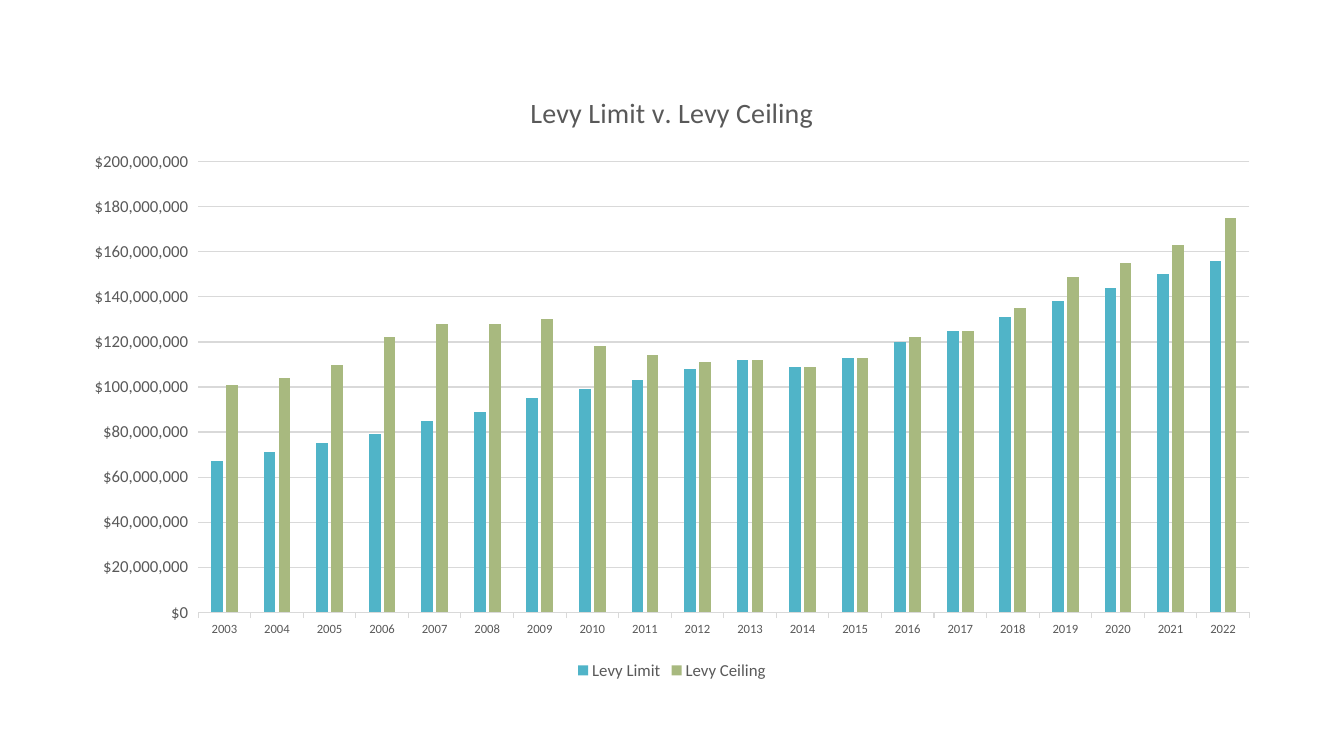
import dataclasses

import pptx
import pptx.chart.data
import pptx.dml.color
import pptx.enum.chart
import pptx.util


@dataclasses.dataclass(frozen=True)
class Theme:
    font: str = "Calibri"
    text: str = "595959"
    rule: str = "D9D9D9"
    title_size: int = 20
    label_size: int = 12
    year_size: int = 9
    rule_width: float = 0.75


@dataclasses.dataclass(frozen=True)
class Levy:
    name: str
    color: str
    millions: tuple[int, ...]


THEME = Theme()
SLIDE_WIDTH = pptx.util.Inches(13.33)
SLIDE_HEIGHT = pptx.util.Inches(7.5)
MILLION = 1_000_000
YEARS = range(2003, 2023)

LEVIES = (
    Levy("Levy Limit", "50B4C8",
         (67, 71, 75, 79, 85, 89, 95, 99, 103, 108,
          112, 109, 113, 120, 125, 131, 138, 144, 150, 156)),
    Levy("Levy Ceiling", "A8B97F",
         (101, 104, 110, 122, 128, 128, 130, 118, 114, 111,
          112, 109, 113, 122, 125, 135, 149, 155, 163, 175)),
)


def rgb(value: str) -> pptx.dml.color.RGBColor:
    return pptx.dml.color.RGBColor.from_string(value)


def style_font(font, size: int) -> None:
    font.name = THEME.font
    font.size = pptx.util.Pt(size)
    font.bold = False
    font.color.rgb = rgb(THEME.text)


def style_rule(line) -> None:
    line.color.rgb = rgb(THEME.rule)
    line.width = pptx.util.Pt(THEME.rule_width)


def add_levy_chart(slide):
    data = pptx.chart.data.CategoryChartData(number_format='"$"#,##0')
    data.categories = [str(year) for year in YEARS]
    for levy in LEVIES:
        data.add_series(levy.name, [value * MILLION for value in levy.millions])
    # Left, top, width and height as shares of the slide
    return slide.shapes.add_chart(
        pptx.enum.chart.XL_CHART_TYPE.COLUMN_CLUSTERED,
        int(SLIDE_WIDTH * 0.0525), int(SLIDE_HEIGHT * 0.0933),
        int(SLIDE_WIDTH * 0.895), int(SLIDE_HEIGHT * 0.812), data).chart


def style_columns(chart) -> None:
    plot = chart.plots[0]
    plot.gap_width = 219
    plot.overlap = -27
    plot.vary_by_categories = False
    for series, levy in zip(plot.series, LEVIES):
        series.format.fill.solid()
        series.format.fill.fore_color.rgb = rgb(levy.color)
        series.format.line.fill.background()


def style_axes(chart) -> None:
    years = chart.category_axis
    style_font(years.tick_labels.font, THEME.year_size)
    style_rule(years.format.line)

    dollars = chart.value_axis
    dollars.minimum_scale = 0
    dollars.maximum_scale = 200 * MILLION
    dollars.major_unit = 20 * MILLION
    dollars.tick_labels.number_format = '"$"#,##0'
    dollars.tick_labels.number_format_is_linked = False
    style_font(dollars.tick_labels.font, THEME.label_size)
    dollars.format.line.fill.background()
    style_rule(dollars.major_gridlines.format.line)


def style_title_and_legend(chart) -> None:
    chart.has_title = True
    heading = chart.chart_title.text_frame
    heading.text = "Levy Limit v. Levy Ceiling"
    style_font(heading.paragraphs[0].font, THEME.title_size)
    chart.chart_title.include_in_layout = False

    chart.has_legend = True
    chart.legend.position = pptx.enum.chart.XL_LEGEND_POSITION.BOTTOM
    chart.legend.include_in_layout = False
    style_font(chart.legend.font, THEME.label_size)


def main() -> None:
    deck = pptx.Presentation()
    deck.slide_width = SLIDE_WIDTH
    deck.slide_height = SLIDE_HEIGHT
    slide = deck.slides.add_slide(deck.slide_layouts[6])

    # Levy comparison by year
    levy_chart = add_levy_chart(slide)
    style_columns(levy_chart)
    style_axes(levy_chart)
    style_title_and_legend(levy_chart)

    deck.save("out.pptx")


if __name__ == "__main__":
    main()
